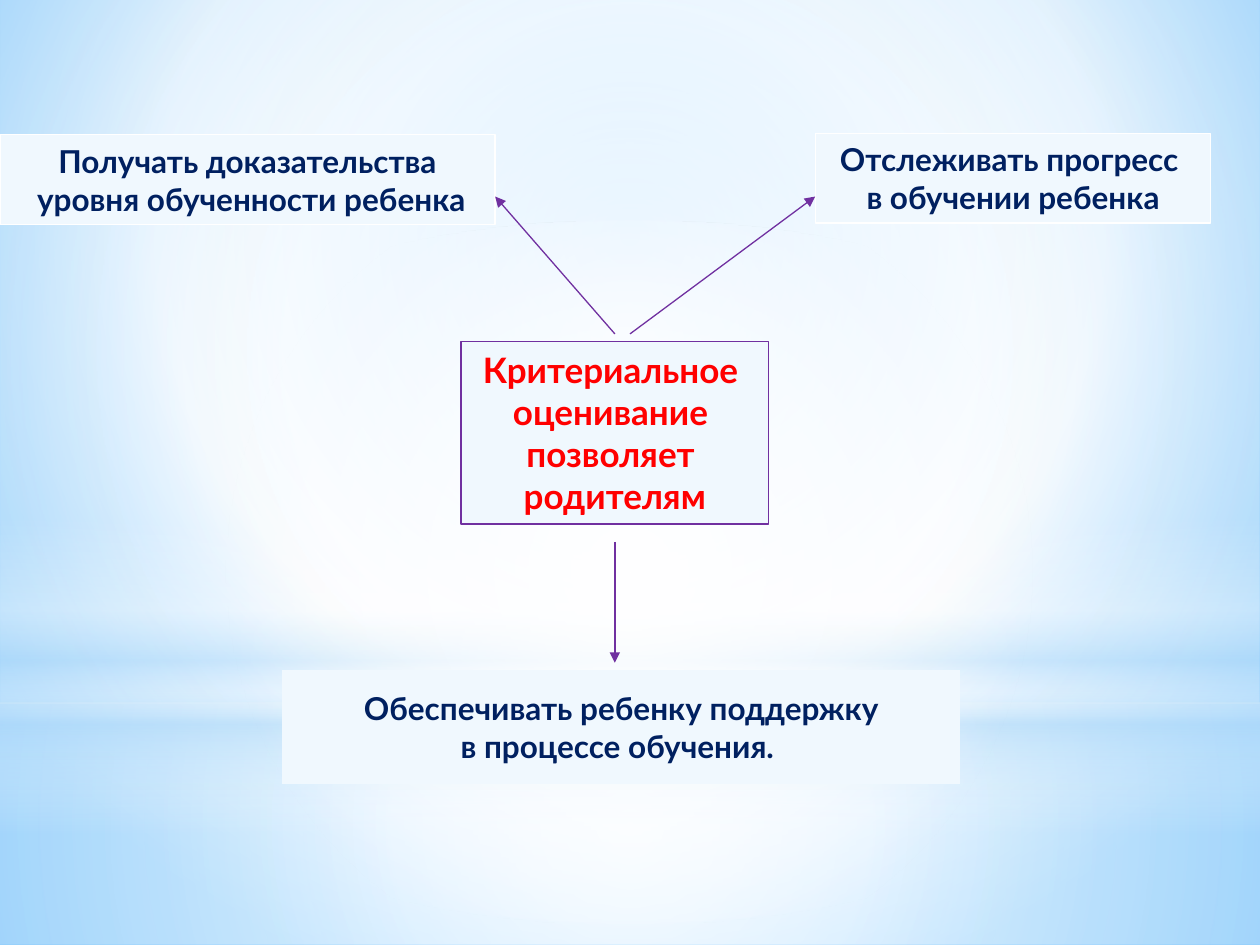
from lxml import etree
from pptx import Presentation
from pptx.dml.color import RGBColor
from pptx.enum.shapes import MSO_CONNECTOR, MSO_SHAPE
from pptx.enum.text import MSO_ANCHOR, PP_ALIGN
from pptx.oxml.ns import qn
from pptx.util import Inches, Pt

RECTANGLE, ELLIPSE = MSO_SHAPE.RECTANGLE, MSO_SHAPE.OVAL
STRAIGHT = MSO_CONNECTOR.STRAIGHT
CENTER, MIDDLE = PP_ALIGN.CENTER, MSO_ANCHOR.MIDDLE
FONT = "Lato"
NAVY, RED, PURPLE, WHITE, PANEL = "002060", "FF0000", "7030A0", "FFFFFF", "F0F8FE"
SKY = "B4DCFA"
NO_TABLE_STYLE = "{2D5ABB26-0587-4C30-8999-92F81FD0307C}"
MIDPOINT = (50, 50, 50, 50)

# Box, preset, stops (position, colour, opacity in percent), focus or None for linear
BACKDROP = [
    ((0, 5.58, 10, 1.92), RECTANGLE,
     [(0, WHITE, 91), (37, WHITE, 76), (100, SKY, 79)], MIDPOINT),
    ((0, 0, 10, 5.58), RECTANGLE,
     [(0, WHITE, 89), (48, WHITE, 62), (100, SKY, 79)], MIDPOINT),
    ((0, 4.12, 10, 2.5), RECTANGLE,
     [(0, WHITE, 0), (29, WHITE, 30), (45, SKY, 40), (55, WHITE, 26),
      (65, SKY, 60), (100, WHITE, 0)], None),
    ((0, 1.75, 10, 5.58), ELLIPSE, [(0, WHITE, 100), (56, WHITE, 0)], MIDPOINT),
]
# Box, lines of text, size, text colour, outline colour
LABELS = [
    ((3.66, 2.71, 2.44, 1.45),
     ["Критериальное ", "оценивание ", "позволяет ", "родителям"], 20, RED, PURPLE),
    ((0, 1.07, 3.93, 0.71),
     ["Получать доказательства", " уровня обученности ребенка"], 18, NAVY, WHITE),
    ((6.47, 1.06, 3.14, 0.71),
     ["Отслеживать прогресс ", "в обучении ребенка"], 18, NAVY, WHITE),
]
SUPPORT = [" Обеспечивать ребенку поддержку ", "в процессе обучения. "]
ARROWS = [
    ((4.88, 4.3), (4.88, 5.26)),
    ((4.88, 2.65), (3.93, 1.56)),
    ((5, 2.65), (6.47, 1.56)),
]


def color(hex_value):
    return RGBColor.from_string(hex_value)


def inches(values):
    return [Inches(value) for value in values]


def set_gradient(fill, parent, stops, focus):
    """Replace the fill of parent by a circular gradient, or a downward one without focus."""
    fill.solid()
    gradient = etree.Element(qn("a:gradFill"), rotWithShape="1")
    stop_list = etree.SubElement(gradient, qn("a:gsLst"))
    for position, hex_value, opacity in stops:
        stop = etree.SubElement(stop_list, qn("a:gs"), pos=str(position * 1000))
        stop_color = etree.SubElement(stop, qn("a:srgbClr"), val=hex_value)
        if opacity < 100:
            etree.SubElement(stop_color, qn("a:alpha"), val=str(opacity * 1000))
    if focus:
        circle = etree.SubElement(gradient, qn("a:path"), path="circle")
        edges = {side: str(value * 1000) for side, value in zip("ltrb", focus)}
        etree.SubElement(circle, qn("a:fillToRect"), edges)
    else:
        etree.SubElement(gradient, qn("a:lin"), ang=str(90 * 60000), scaled="0")
    parent.replace(parent.find(qn("a:solidFill")), gradient)


def add_backdrop(slide):
    fill = slide.background.fill
    fill.solid()
    properties = slide.element.find(".//" + qn("p:bgPr"))
    set_gradient(fill, properties,
                 [(0, "9ED5FF", 100), (60, WHITE, 100), (100, "5BB9FF", 100)],
                 (20, 10, 20, 60))
    for box, preset, stops, focus in BACKDROP:
        shape = slide.shapes.add_shape(preset, *inches(box))
        shape.shadow.inherit = False
        shape.line.fill.background()
        set_gradient(shape.fill, shape.element.spPr, stops, focus)


def write_lines(text_frame, lines, size, hex_value):
    for index, line in enumerate(lines):
        paragraph = text_frame.paragraphs[0] if index == 0 else text_frame.add_paragraph()
        paragraph.alignment = CENTER
        run = paragraph.add_run()
        run.text = line
        run.font.name = FONT
        run.font.size = Pt(size)
        run.font.bold = True
        run.font.color.rgb = color(hex_value)


def add_label(slide, box, lines, size, text_color, outline):
    shape = slide.shapes.add_shape(RECTANGLE, *inches(box))
    shape.shadow.inherit = False
    shape.fill.solid()
    shape.fill.fore_color.rgb = color(PANEL)
    shape.line.color.rgb = color(outline)
    shape.line.width = Pt(0.75)
    shape.text_frame.word_wrap = False
    shape.text_frame.vertical_anchor = MIDDLE
    write_lines(shape.text_frame, lines, size, text_color)


def add_support_table(slide, box):
    table = slide.shapes.add_table(1, 1, *inches(box)).table
    table.first_row = table.horz_banding = False
    table._tbl.tblPr.find(qn("a:tableStyleId")).text = NO_TABLE_STYLE
    cell = table.cell(0, 0)
    cell.fill.solid()
    cell.fill.fore_color.rgb = color(PANEL)
    cell.vertical_anchor = MIDDLE
    cell.margin_left = cell.margin_right = Inches(0.07)
    cell.margin_top = cell.margin_bottom = Inches(0.1)
    write_lines(cell.text_frame, SUPPORT, 18, NAVY)


def add_arrow(slide, start, end):
    arrow = slide.shapes.add_connector(STRAIGHT, *inches(start + end))
    arrow.line.color.rgb = color(PURPLE)
    arrow.line.width = Pt(0.75)
    etree.SubElement(arrow.line._get_or_add_ln(), qn("a:tailEnd"), type="triangle")
    etree.SubElement(arrow.element.spPr, qn("a:effectLst"))


def main():
    presentation = Presentation()
    presentation.slide_width, presentation.slide_height = Inches(10), Inches(7.5)
    slide = presentation.slides.add_slide(presentation.slide_layouts[6])
    add_backdrop(slide)
    add_support_table(slide, (2.24, 5.32, 5.38, 0.9))
    for label in LABELS:
        add_label(slide, *label)
    for start, end in ARROWS:
        add_arrow(slide, start, end)
    presentation.save("out.pptx")


if __name__ == "__main__":
    main()
